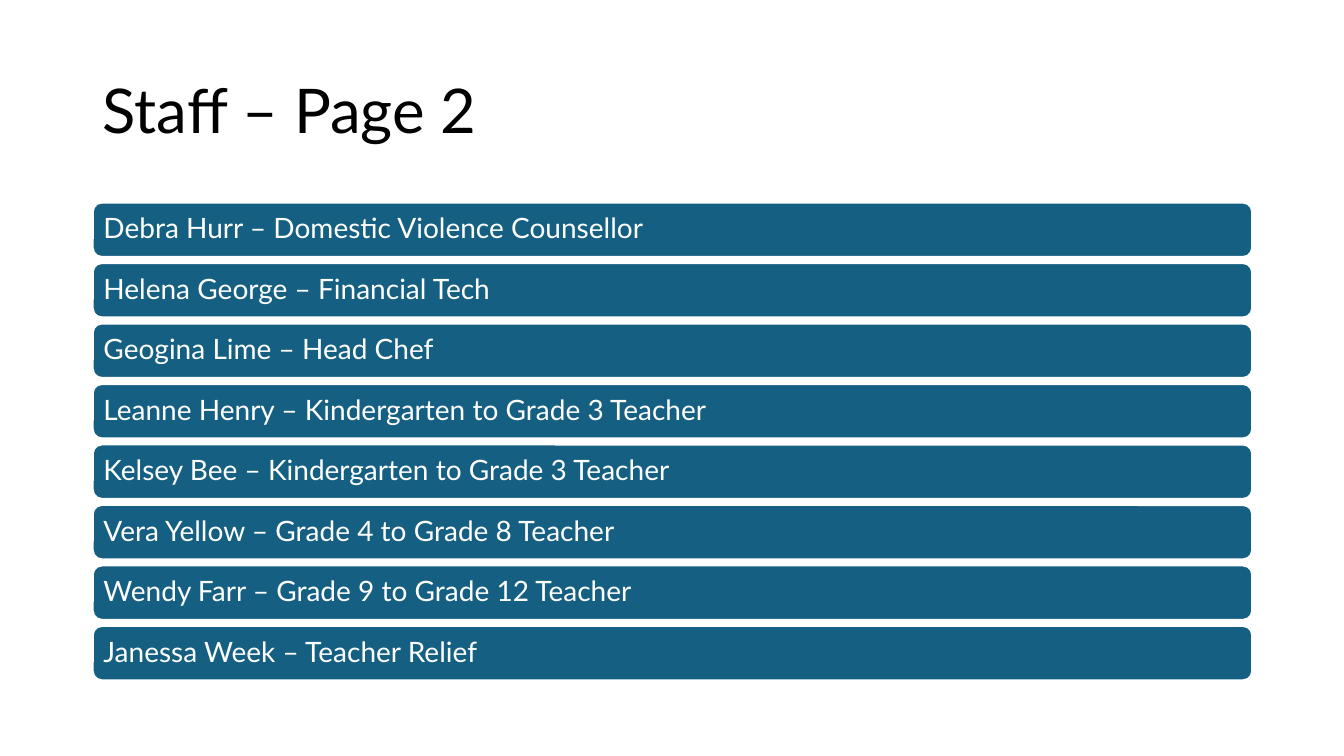
import pptx
import pptx.dml.color
import pptx.enum.shapes
import pptx.enum.text
import pptx.util

Inches, Pt = pptx.util.Inches, pptx.util.Pt
RGB = pptx.dml.color.RGBColor

THEME = {
    "font": "Lato",
    "title_color": RGB(0x00, 0x00, 0x00),
    "bar_color": RGB(0x15, 0x60, 0x82),
    "bar_text_color": RGB(0xFF, 0xFF, 0xFF),
    "bar_outline": RGB(0xFF, 0xFF, 0xFF),
    "title_size": Pt(44),
    "bar_size": Pt(20),
}

STAFF = [
    ("Debra Hurr", "Domestic Violence Counsellor"),
    ("Helena George", "Financial Tech"),
    ("Geogina Lime", "Head Chef"),
    ("Leanne Henry", "Kindergarten to Grade 3 Teacher"),
    ("Kelsey Bee", "Kindergarten to Grade 3 Teacher"),
    ("Vera Yellow", "Grade 4 to Grade 8 Teacher"),
    ("Wendy Farr", "Grade 9 to Grade 12 Teacher"),
    ("Janessa Week", "Teacher Relief"),
]

# Grid: one column, one row per staff member
LEFT, WIDTH = 0.92, 11.5
FIRST_ROW, ROW_PITCH, BAR_HEIGHT = 2.01, 0.6, 0.54


def write_line(frame, text, size, color):
    """Put one left-aligned, vertically centred line into a text frame."""
    frame.text = text
    frame.word_wrap = True
    frame.vertical_anchor = pptx.enum.text.MSO_ANCHOR.MIDDLE
    line = frame.paragraphs[0]
    line.alignment = pptx.enum.text.PP_ALIGN.LEFT
    line.line_spacing = 0.9
    line.font.name = THEME["font"]
    line.font.size = size
    line.font.color.rgb = color


deck = pptx.Presentation()
deck.slide_width, deck.slide_height = Inches(13.33), Inches(7.5)
slide = deck.slides.add_slide(deck.slide_layouts.get_by_name("Title Only"))

heading = slide.shapes.title
heading.left, heading.top = Inches(LEFT), Inches(0.4)
heading.width, heading.height = Inches(WIDTH), Inches(1.45)
write_line(heading.text_frame, "Staff – Page 2", THEME["title_size"], THEME["title_color"])

for row, (person, role) in enumerate(STAFF):
    staff_bar = slide.shapes.add_shape(
        pptx.enum.shapes.MSO_SHAPE.ROUNDED_RECTANGLE,
        Inches(LEFT), Inches(FIRST_ROW + row * ROW_PITCH),
        Inches(WIDTH), Inches(BAR_HEIGHT),
    )
    staff_bar.shadow.inherit = False
    staff_bar.fill.solid()
    staff_bar.fill.fore_color.rgb = THEME["bar_color"]
    staff_bar.line.color.rgb = THEME["bar_outline"]
    staff_bar.line.width = Pt(1.5)

    label = staff_bar.text_frame
    label.margin_left = label.margin_right = Inches(0.08)
    label.margin_top = label.margin_bottom = Inches(0.08)
    write_line(label, f"{person} – {role}", THEME["bar_size"], THEME["bar_text_color"])

deck.save("out.pptx")
